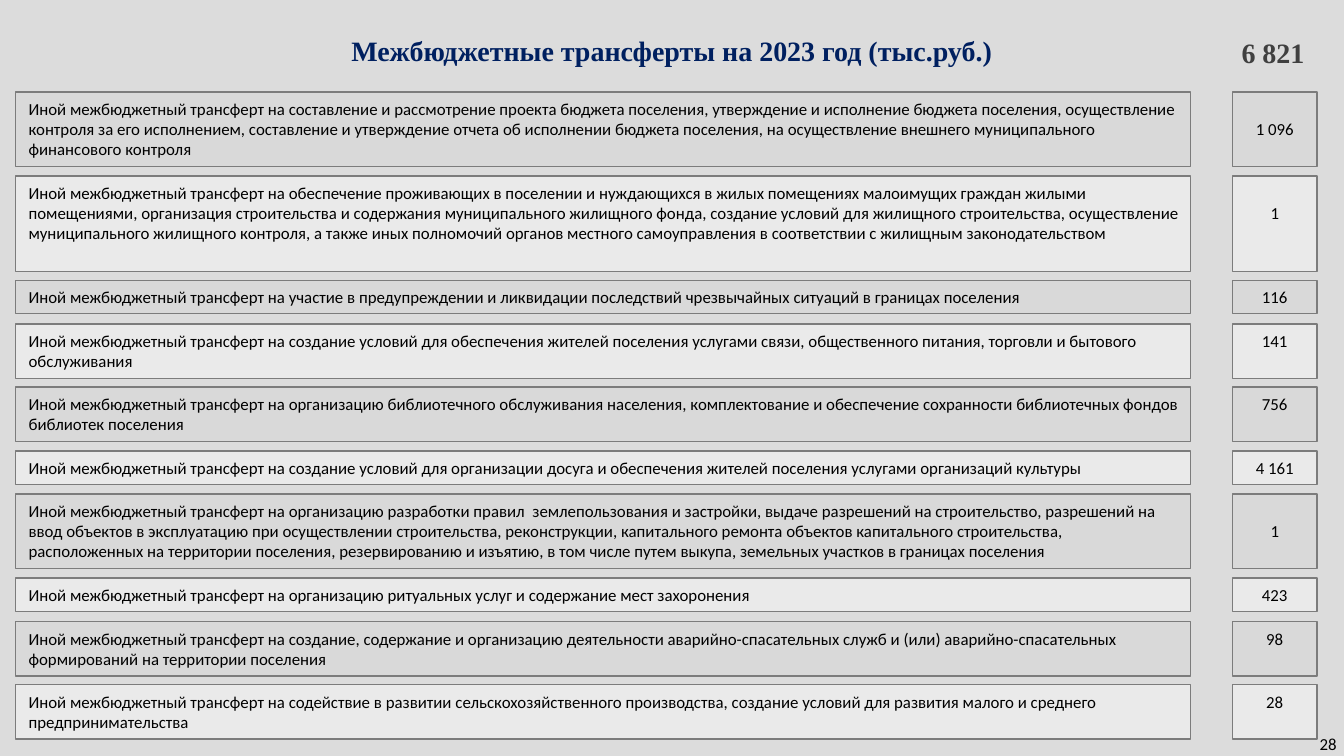
from dataclasses import dataclass

from pptx import Presentation
from pptx.dml.color import RGBColor
from pptx.enum.shapes import MSO_SHAPE as Shape
from pptx.enum.text import MSO_ANCHOR as Anchor, PP_ALIGN as Align
from pptx.util import Emu, Pt

PX = 4572  # EMU in one px, 200 px to the inch


@dataclass(frozen=True)
class Theme:
    background: str = "DCDCDC"
    bands: tuple = ("D9D9D9", "EAEAEA")
    border: str = "7C7C7C"
    ink: str = "000000"
    title_ink: str = "002060"
    total_ink: str = "404040"
    body_font: str = "Calibri"
    title_font: str = "Times New Roman"
    body_size: int = 9
    title_size: int = 15


THEME = Theme()

TITLE = "Межбюджетные трансферты на 2023 год (тыс.руб.)"
TOTAL = "6 821"
PAGE_NUMBER = "28"
PREFIX = "Иной межбюджетный трансферт на "

# purpose, amount, number of text lines
TRANSFERS = [
    ("составление и рассмотрение проекта бюджета поселения, утверждение и исполнение "
     "бюджета поселения, осуществление контроля за его исполнением, составление и "
     "утверждение отчета об исполнении бюджета поселения, на осуществление внешнего "
     "муниципального финансового контроля", "1 096", 3),
    ("обеспечение проживающих в поселении и нуждающихся в жилых помещениях малоимущих "
     "граждан жилыми помещениями, организация строительства и содержания муниципального "
     "жилищного фонда, создание условий для жилищного строительства, осуществление "
     "муниципального жилищного контроля, а также иных полномочий органов местного "
     "самоуправления в соответствии с жилищным законодательством", "1", 4),
    ("участие в предупреждении и ликвидации последствий чрезвычайных ситуаций в границах "
     "поселения", "116", 1),
    ("создание условий для обеспечения жителей поселения услугами связи, общественного "
     "питания, торговли и бытового обслуживания", "141", 2),
    ("организацию библиотечного обслуживания населения, комплектование и обеспечение "
     "сохранности библиотечных фондов библиотек поселения", "756", 2),
    ("создание условий для организации досуга и обеспечения жителей поселения услугами "
     "организаций культуры", "4 161", 1),
    ("организацию разработки правил  землепользования и застройки, выдаче разрешений на "
     "строительство, разрешений на ввод объектов в эксплуатацию при осуществлении "
     "строительства, реконструкции, капитального ремонта объектов капитального "
     "строительства, расположенных на территории поселения, резервированию и изъятию, в "
     "том числе путем выкупа, земельных участков в границах поселения", "1", 3),
    ("организацию ритуальных услуг и содержание мест захоронения", "423", 1),
    ("создание, содержание и организацию деятельности аварийно-спасательных служб и (или) "
     "аварийно-спасательных формирований на территории поселения", "98", 2),
    ("содействие в развитии сельскохозяйственного производства, создание условий для "
     "развития малого и среднего предпринимательства", "28", 2),
]


def px(*lengths):
    return [Emu(round(length) * PX) for length in lengths]


def write(shape, text, font=THEME.body_font, size=THEME.body_size, color=THEME.ink,
          bold=False, align=Align.LEFT, anchor=Anchor.TOP, inset_top=10):
    frame = shape.text_frame
    frame.word_wrap = True
    frame.vertical_anchor = anchor
    frame.margin_left, frame.margin_top, frame.margin_right, frame.margin_bottom = px(
        20, inset_top, 20, 10)
    para = frame.paragraphs[0]
    para.alignment = align
    span = para.add_run()
    span.text = text
    span.font.name = font
    span.font.size = Pt(size)
    span.font.bold = bold
    span.font.color.rgb = RGBColor.from_string(color)


def add_panel(page, box, fill):
    panel = page.shapes.add_shape(Shape.RECTANGLE, *px(*box))
    panel.shadow.inherit = False
    panel.fill.solid()
    panel.fill.fore_color.rgb = RGBColor.from_string(fill)
    panel.line.color.rgb = RGBColor.from_string(THEME.border)
    panel.line.width = Pt(0.75)
    return panel


def add_heading(page, box):
    left, top, width, height = box
    heading = dict(font=THEME.title_font, size=THEME.title_size, bold=True)
    title = page.shapes.title
    title.left, title.top, title.width, title.height = px(*box)
    write(title, TITLE, color=THEME.title_ink, align=Align.CENTER,
          anchor=Anchor.MIDDLE, **heading)
    total = page.shapes.add_textbox(*px(left + width - 207, top + 15, 268, 70))
    write(total, TOTAL, color=THEME.total_ink, align=Align.RIGHT, **heading)


def add_transfers(page, box):
    """Stack the rows; each is as tall as its lines, with equal gaps between."""
    left, top, width, height = box
    amount_width, gutter, padding = 126, 62, 20
    line_height = 30.4
    row_heights = [padding + line_height * lines for _, _, lines in TRANSFERS]
    gap = (height - sum(row_heights)) / (len(TRANSFERS) - 1)
    purpose_width = width - gutter - amount_width
    for index, (purpose, amount, lines) in enumerate(TRANSFERS):
        fill = THEME.bands[index % 2]
        row = row_heights[index]
        write(add_panel(page, (left, top, purpose_width, row), fill), PREFIX + purpose)
        amount_left = left + purpose_width + gutter
        # Amounts in tall rows sit on the second line
        inset_top = 10 + (line_height if lines > 2 else 0)
        write(add_panel(page, (amount_left, top, amount_width, row), fill), amount,
              align=Align.CENTER, inset_top=inset_top)
        top += row + gap


def add_page_number(page, box):
    write(page.shapes.add_textbox(*px(*box)), PAGE_NUMBER)


def main():
    deck = Presentation()
    deck.slide_width, deck.slide_height = px(2000, 1125)
    page = deck.slides.add_slide(deck.slide_layouts[5])
    page.background.fill.solid()
    page.background.fill.fore_color.rgb = RGBColor.from_string(THEME.background)
    add_heading(page, (100, 28, 1800, 94))
    add_transfers(page, (23, 137, 1937, 963))
    add_page_number(page, (1944, 1082, 82, 50))
    deck.save("out.pptx")


if __name__ == "__main__":
    main()
